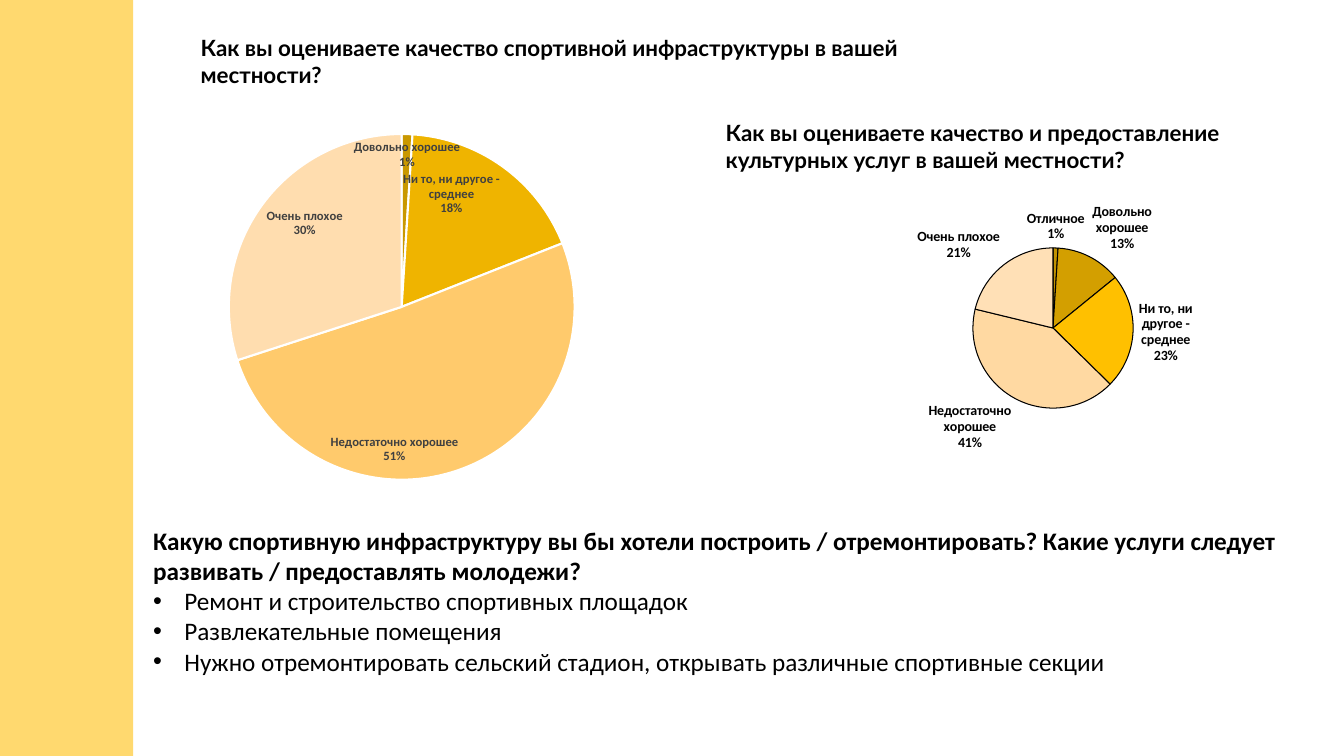
from dataclasses import dataclass

from lxml import etree
from pptx import Presentation
from pptx.chart.data import CategoryChartData
from pptx.dml.color import RGBColor
from pptx.enum.chart import XL_CHART_TYPE, XL_LABEL_POSITION
from pptx.enum.shapes import MSO_SHAPE
from pptx.enum.text import MSO_ANCHOR, MSO_AUTO_SIZE, PP_ALIGN
from pptx.oxml import parse_xml
from pptx.oxml.ns import nsdecls, qn
from pptx.util import Inches, Pt

PIE = XL_CHART_TYPE.PIE
OUTSIDE_END = XL_LABEL_POSITION.OUTSIDE_END
INSIDE_END = XL_LABEL_POSITION.INSIDE_END
RECTANGLE = MSO_SHAPE.RECTANGLE
TOP = MSO_ANCHOR.TOP
NO_AUTOFIT = MSO_AUTO_SIZE.NONE
LEFT = PP_ALIGN.LEFT

BLACK = RGBColor(0x00, 0x00, 0x00)
WHITE = RGBColor(0xFF, 0xFF, 0xFF)
GREY = RGBColor(0x40, 0x40, 0x40)
SAND = RGBColor(0xFF, 0xD9, 0x6F)

HEADING_FONT = {"name": "Lato", "size": Pt(16), "bold": True}
QUESTION_FONT = {"name": "Calibri", "size": Pt(18), "bold": True}
ANSWER_FONT = {**QUESTION_FONT, "bold": False}
FRAME_FORMAT = {"word_wrap": True, "auto_size": NO_AUTOFIT, "vertical_anchor": TOP}


@dataclass(frozen=True)
class Box:
    left: float
    top: float
    width: float
    height: float

    def lengths(self):
        return [Inches(v) for v in (self.left, self.top, self.width, self.height)]


@dataclass(frozen=True)
class Slice:
    answer: str
    share: int
    color: RGBColor


@dataclass(frozen=True)
class Survey:
    box: Box
    slices: tuple[Slice, ...]
    diameter: float
    shift: float
    border: RGBColor
    border_width: float
    label_position: XL_LABEL_POSITION
    label_font: dict


CULTURE = Survey(
    Box(8.18, 1.87, 4.43, 2.77),
    (
        Slice("Отличное", 1, RGBColor(0xC1, 0x92, 0x00)),
        Slice("Довольно хорошее", 13, RGBColor(0xD3, 0x9F, 0x00)),
        Slice("Ни то, ни другое - среднее", 23, RGBColor(0xFF, 0xC0, 0x00)),
        Slice("Недостаточно хорошее", 41, RGBColor(0xFF, 0xD9, 0xA2)),
        Slice("Очень плохое", 21, RGBColor(0xFF, 0xE0, 0xB6)),
    ),
    1.59, 0.05, BLACK, 0.75, OUTSIDE_END,
    {"name": "Calibri", "size": Pt(10), "bold": True},
)
SPORT = Survey(
    Box(1.23, 1.19, 5.49, 3.71),
    (
        Slice("Довольно хорошее", 1, RGBColor(0xC9, 0x98, 0x00)),
        Slice("Ни то, ни другое - среднее", 18, RGBColor(0xEF, 0xB4, 0x00)),
        Slice("Недостаточно хорошее", 51, RGBColor(0xFF, 0xCA, 0x6C)),
        Slice("Очень плохое", 30, RGBColor(0xFF, 0xDD, 0xAF)),
    ),
    3.43, 0.01, WHITE, 1.5, INSIDE_END,
    {"name": "Calibri", "size": Pt(9), "bold": True},
)
WISHES = (
    "Ремонт и строительство спортивных площадок",
    "Развлекательные помещения",
    "Нужно отремонтировать сельский стадион, открывать различные спортивные секции",
)


def apply(target, values: dict) -> None:
    for attribute, value in values.items():
        setattr(target, attribute, value)


def style_font(font, values: dict, color: RGBColor = BLACK) -> None:
    apply(font, values)
    font.color.rgb = color


def write(paragraph, text: str, font: dict) -> None:
    paragraph.text = text
    paragraph.alignment = LEFT
    style_font(paragraph.font, font)


def add_bullet(paragraph) -> None:
    properties = paragraph._p.get_or_add_pPr()
    properties.set("marL", str(Inches(0.31)))
    properties.set("indent", str(-Inches(0.31)))
    etree.SubElement(properties, qn("a:buFont")).set("typeface", "Arial")
    etree.SubElement(properties, qn("a:buChar")).set("char", "•")


def add_text(slide, box: Box, text: str, font: dict):
    frame = slide.shapes.add_textbox(*box.lengths()).text_frame
    apply(frame, FRAME_FORMAT)
    write(frame.paragraphs[0], text, font)
    return frame


def place_pie(chart, survey: Survey) -> None:
    width = survey.diameter / survey.box.width
    height = survey.diameter / survey.box.height
    fractions = {
        "x": (1 - width) / 2 + survey.shift / survey.box.width,
        "y": (1 - height) / 2,
        "w": width,
        "h": height,
    }
    values = "".join(f'<c:{key} val="{v:.4f}"/>' for key, v in fractions.items())
    plot_area = chart._chartSpace.chart.plotArea
    for layout in plot_area.findall(qn("c:layout")):
        plot_area.remove(layout)
    plot_area.insert(0, parse_xml(
        f'<c:layout {nsdecls("c")}><c:manualLayout><c:layoutTarget val="inner"/>'
        f'<c:xMode val="edge"/><c:yMode val="edge"/>{values}'
        "</c:manualLayout></c:layout>"
    ))


def add_survey(slide, survey: Survey, label_color: RGBColor) -> None:
    data = CategoryChartData()
    data.categories = [part.answer for part in survey.slices]
    data.add_series("Series 1", [part.share for part in survey.slices])
    chart = slide.shapes.add_chart(PIE, *survey.box.lengths(), data).chart
    apply(chart, {"has_legend": False, "has_title": False})
    style_font(chart.font, {"name": "Calibri", "size": Pt(10)})
    place_pie(chart, survey)

    plot = chart.plots[0]
    plot.vary_by_categories = True
    series = plot.series[0]
    for index, part in enumerate(survey.slices):
        point = series.points[index].format
        point.fill.solid()
        point.fill.fore_color.rgb = part.color
        point.line.color.rgb = survey.border
        point.line.width = Pt(survey.border_width)

    labels = series.data_labels
    apply(labels, {
        "show_category_name": True,
        "show_percentage": True,
        "show_value": False,
        "number_format": "0%",
        "number_format_is_linked": False,
        "position": survey.label_position,
    })
    style_font(labels.font, survey.label_font, label_color)
    separator = parse_xml(f'<c:separator {nsdecls("c")}>\n</c:separator>')
    labels._element.find(qn("c:showBubbleSize")).addnext(separator)


def main() -> None:
    presentation = Presentation()
    presentation.slide_width = Inches(13.33)
    presentation.slide_height = Inches(7.5)
    slide = presentation.slides.add_slide(presentation.slide_layouts[5])

    band = slide.shapes.add_shape(RECTANGLE, *Box(0, 0, 1.32, 7.5).lengths())
    band.shadow.inherit = False
    band.fill.solid()
    band.fill.fore_color.rgb = SAND
    band.line.fill.background()

    title = slide.shapes.title
    title.left, title.top, title.width, title.height = Box(1.89, 0.29, 7.6, 0.64).lengths()
    apply(title.text_frame, FRAME_FORMAT)
    write(title.text_frame.paragraphs[0],
          "Как вы оцениваете качество спортивной инфраструктуры в вашей местности?",
          HEADING_FONT)
    add_text(slide, Box(7.1, 1.13, 5.73, 0.64),
             "Как вы оцениваете качество и предоставление культурных услуг в вашей местности?",
             HEADING_FONT)

    wishes = add_text(slide, Box(1.42, 5.16, 11.82, 1.92),
                      "Какую спортивную инфраструктуру вы бы хотели построить / отремонтировать? "
                      "Какие услуги следует развивать / предоставлять молодежи?", QUESTION_FONT)
    for wish in WISHES:
        paragraph = wishes.add_paragraph()
        add_bullet(paragraph)
        write(paragraph, wish, ANSWER_FONT)

    add_survey(slide, CULTURE, BLACK)
    add_survey(slide, SPORT, GREY)
    presentation.save("out.pptx")


if __name__ == "__main__":
    main()
